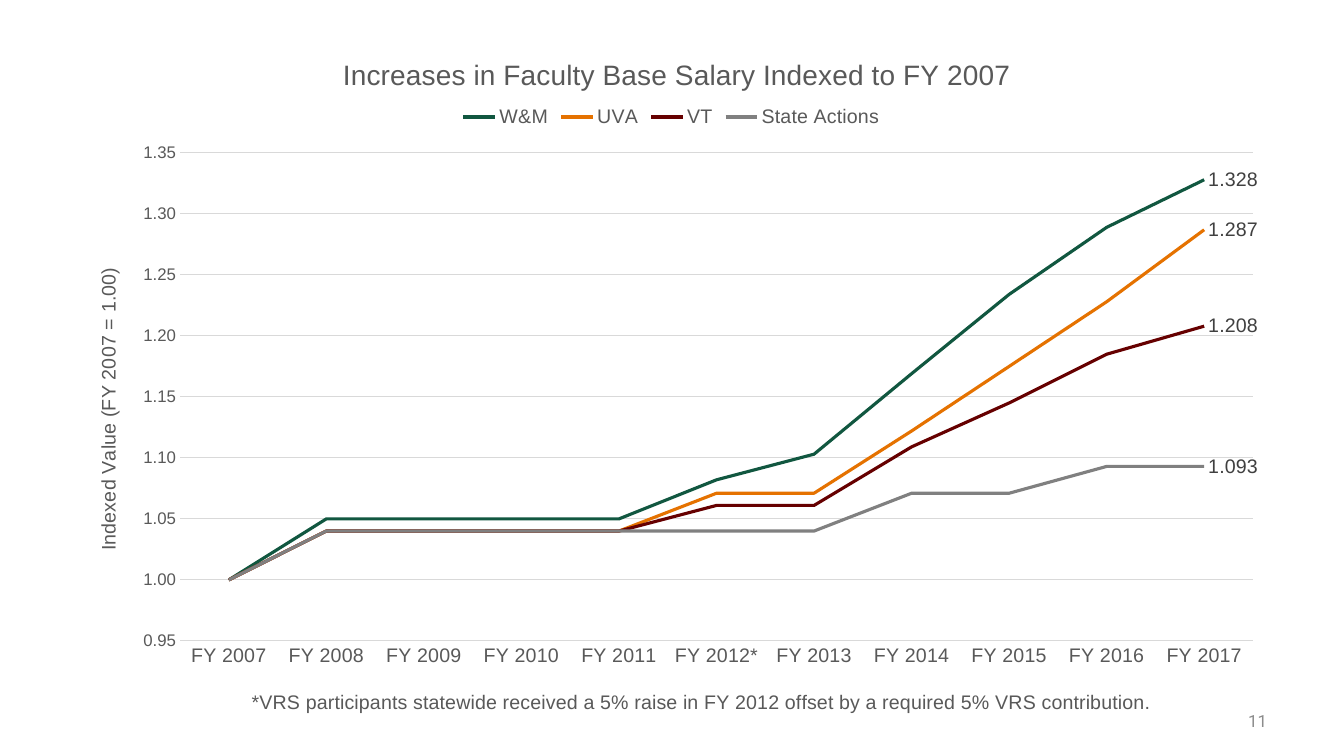
import pptx
import pptx.chart.data
import pptx.dml.color
import pptx.enum.chart
import pptx.enum.text
import pptx.oxml
import pptx.oxml.ns
import pptx.util

TITLE = "Increases in Faculty Base Salary Indexed to FY 2007"
NOTE = ("*VRS participants statewide received a 5% raise in FY 2012 "
        "offset by a required 5% VRS contribution.")
SCALE = "Indexed Value (FY 2007 = 1.00)"
PAGE = "11"
YEARS = [f"FY {year}" + ("*" if year == 2012 else "") for year in range(2007, 2018)]
SERIES = {
    "W&M": [1, 1.05, 1.05, 1.05, 1.05, 1.082, 1.103, 1.169, 1.234, 1.289, 1.328],
    "UVA": [1, 1.04, 1.04, 1.04, 1.04, 1.071, 1.071, 1.122, 1.175, 1.228, 1.287],
    "VT": [1, 1.04, 1.04, 1.04, 1.04, 1.061, 1.061, 1.109, 1.145, 1.185, 1.208],
    "State Actions": [1, 1.04, 1.04, 1.04, 1.04, 1.04, 1.04, 1.071, 1.071, 1.093, 1.093],
}
COLORS = {
    "W&M": "115740", "UVA": "E57200", "VT": "660000", "State Actions": "808080",
    "text": "595959", "label": "404040", "grid": "D9D9D9", "page": "8C8C8C",
}

# Boxes in px: left, top, width, height
SLIDE = (1344, 756)
CHART = (68, 25, 1210, 706)
PLOT = (180, 153, 1073, 488)
NUMBER = (964, 701, 313, 40)
PX = 914400 / 100.8


def emu(box):
    return [pptx.util.Emu(round(n * PX)) for n in box]


def rgb(name):
    return pptx.dml.color.RGBColor.from_string(COLORS[name])


def style(font, size, color="text", face="Arial"):
    font.size = pptx.util.Pt(size)
    font.name = face
    font.bold = False
    font.color.rgb = rgb(color)


def stroke(line, color, width):
    line.color.rgb = rgb(color)
    line.width = pptx.util.Pt(width)


def place(node, index, left, top, width=None, height=None):
    """Pin a chart part at slide px, as fractions of the chart frame."""
    for old in node.findall(pptx.oxml.ns.qn("c:layout")):
        node.remove(old)
    parts = {"x": (left - CHART[0]) / CHART[2], "y": (top - CHART[1]) / CHART[3]}
    inner = ""
    if width:
        parts.update(w=width / CHART[2], h=height / CHART[3])
        inner = '<c:layoutTarget val="inner"/>'
    modes = "".join(f'<c:{key}Mode val="edge"/>' for key in "xy")
    spots = "".join(f'<c:{key} val="{val:.4f}"/>' for key, val in parts.items())
    node.insert(index, pptx.oxml.parse_xml(
        f'<c:layout {pptx.oxml.ns.nsdecls("c")}><c:manualLayout>'
        f"{inner}{modes}{spots}</c:manualLayout></c:layout>"))


def head(owner, text, size, spot):
    """Give a chart or axis its title at a px spot."""
    title = owner.chart_title if hasattr(owner, "chart_title") else owner.axis_title
    frame = title.text_frame
    frame.text = text
    style(frame.paragraphs[0].font, size)
    place(title._element, 1, *spot)


deck = pptx.Presentation()
deck.slide_width, deck.slide_height = emu(SLIDE)
slide = deck.slides.add_slide(deck.slide_layouts[6])

box = slide.shapes.add_textbox(*emu(NUMBER))
frame = box.text_frame
frame.word_wrap = True
frame.vertical_anchor = pptx.enum.text.MSO_ANCHOR.MIDDLE
frame.text = PAGE
frame.paragraphs[0].alignment = pptx.enum.text.PP_ALIGN.RIGHT
style(frame.paragraphs[0].font, 12, "page", "Roboto")

data = pptx.chart.data.CategoryChartData(number_format="0.000")
data.categories = YEARS
for name, values in SERIES.items():
    data.add_series(name, values)
chart = slide.shapes.add_chart(
    pptx.enum.chart.XL_CHART_TYPE.LINE, *emu(CHART), data).chart
style(chart.font, 14)
head(chart, TITLE, 20, (338, 52))
place(chart._chartSpace.chart.plotArea, 0, *PLOT)

chart.has_legend = True
legend = chart.legend
legend.position = pptx.enum.chart.XL_LEGEND_POSITION.TOP
legend.include_in_layout = False
style(legend.font, 14)
place(legend._element, 1, 457, 102)

years, index = chart.category_axis, chart.value_axis
for axis, size in ((years, 14), (index, 12)):
    axis.major_tick_mark = axis.minor_tick_mark = pptx.enum.chart.XL_TICK_MARK.NONE
    style(axis.tick_labels.font, size)
head(years, NOTE, 14, (248, 686))
head(index, SCALE, 14, (92, 264))
stroke(years.format.line, "grid", 0.75)
index.format.line.fill.background()
index.minimum_scale, index.maximum_scale, index.major_unit = 0.95, 1.35, 0.05
index.tick_labels.number_format = "0.00"
index.tick_labels.number_format_is_linked = False
stroke(index.major_gridlines.format.line, "grid", 0.75)

chart.plots[0].vary_by_categories = False
for line in chart.plots[0].series:
    line.smooth = False
    line.marker.style = pptx.enum.chart.XL_MARKER_STYLE.NONE
    stroke(line.format.line, line.name, 2.25)
    label = line.points[len(YEARS) - 1].data_label
    label.position = pptx.enum.chart.XL_LABEL_POSITION.RIGHT
    style(label.font, 14, "label")

deck.save("out.pptx")
